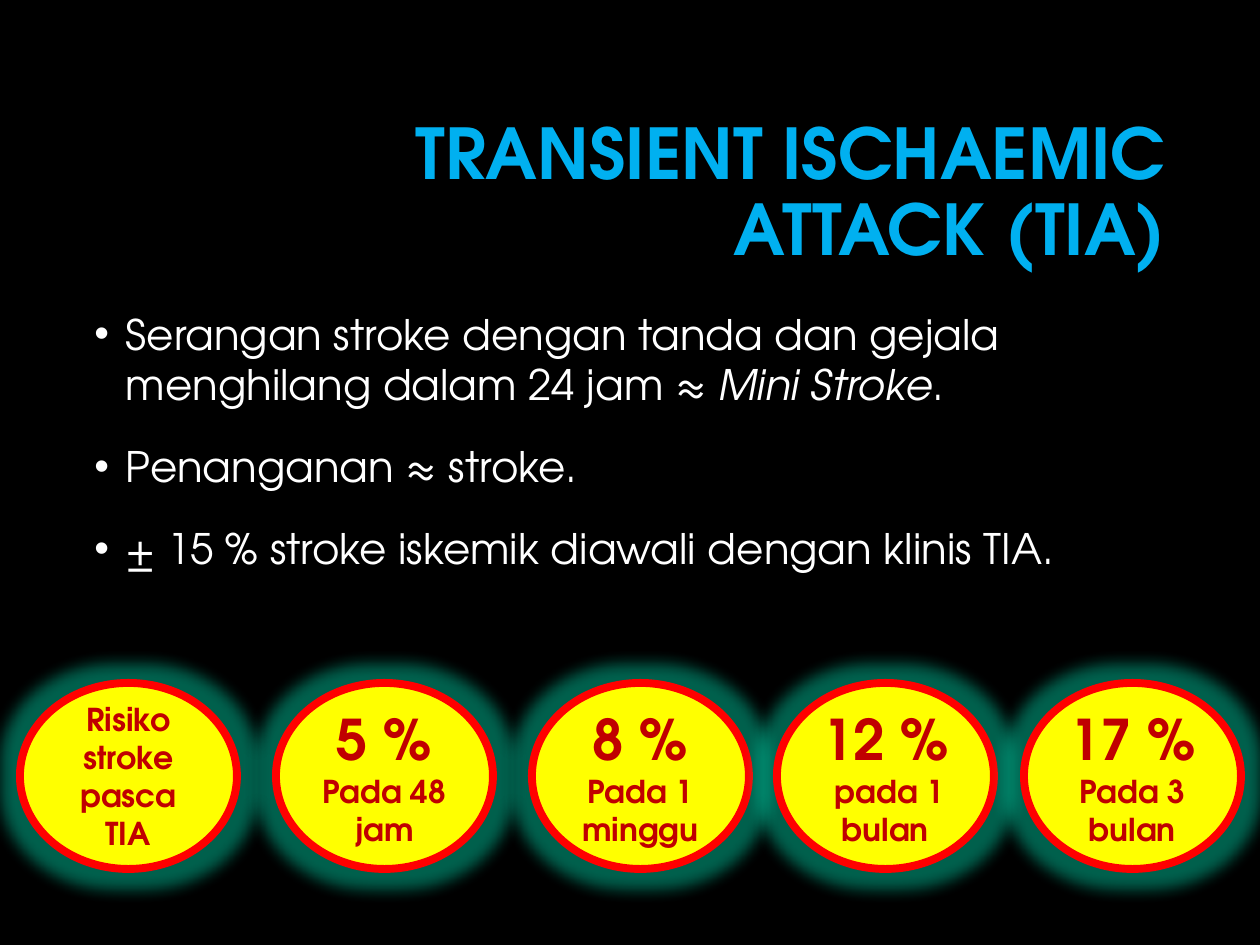
from dataclasses import dataclass

import pptx
import pptx.dml.color
import pptx.enum.shapes
import pptx.enum.text
import pptx.oxml
import pptx.oxml.ns
import pptx.util

RGB = pptx.dml.color.RGBColor
ALIGN = pptx.enum.text.PP_ALIGN
ANCHOR = pptx.enum.text.MSO_ANCHOR
BLACK = RGB(0x00, 0x00, 0x00)
WHITE = RGB(0xFF, 0xFF, 0xFF)
BLUE = RGB(0x00, 0xB0, 0xF0)
YELLOW = RGB(0xFF, 0xFF, 0x00)
RED = RGB(0xFF, 0x00, 0x00)
DARK = RGB(0xC0, 0x00, 0x00)
GLOW = RGB(0x00, 0xF0, 0xC0)

FONT = "TeX Gyre Adventor"
SCALE = 914400 / 126  # EMU in one px
TOP, WIDE, HIGH = 683, 217, 186  # all risk circles


@dataclass
class Risk:
    left: int
    rate: str
    label: str


RISKS = [
    Risk(20, "", "Risiko stroke pasca TIA"),
    Risk(276, "5 %", "Pada 48 jam"),
    Risk(532, "8 %", "Pada 1 minggu"),
    Risk(777, "12 %", " pada 1 bulan"),
    Risk(1024, "17 %", "Pada 3 bulan"),
]

# Each point is a list of (text, italic) runs
POINTS = [
    [
        ("Serangan stroke dengan tanda dan gejala menghilang dalam 24 jam ≈ ", False),
        ("Mini Stroke", True),
        (".", False),
    ],
    [("Penanganan ≈ stroke.", False)],
    [("± 15 % stroke iskemik diawali dengan klinis TIA.", False)],
]


def px(num: int) -> int:
    return pptx.util.Emu(round(num * SCALE))


def add_run(para, text: str, size: int, color: RGB, bold: bool = False,
            italic: bool = False) -> None:
    run = para.add_run()
    run.text = text
    font = run.font
    font.name, font.size = FONT, pptx.util.Pt(size)
    font.bold, font.italic = bold, italic
    font.color.rgb = color


def add_title(slide) -> None:
    title = slide.shapes.title
    title.left, title.top = px(300), px(106)
    title.width, title.height = px(878), px(178)
    frame = title.text_frame
    frame.word_wrap = True
    frame.auto_size = pptx.enum.text.MSO_AUTO_SIZE.NONE
    frame.vertical_anchor = ANCHOR.MIDDLE
    para = frame.paragraphs[0]
    para.alignment = ALIGN.RIGHT
    para.line_spacing = 0.9
    add_run(para, "TRANSIENT ISCHAEMIC ATTACK (TIA)", 40, BLUE, bold=True)


def add_points(slide) -> None:
    box = slide.shapes.add_textbox(px(82), px(302), px(1096), px(561))
    frame = box.text_frame
    frame.word_wrap = True
    for i, runs in enumerate(POINTS):
        para = frame.add_paragraph() if i else frame.paragraphs[0]
        props = para._p.get_or_add_pPr()
        props.set("marL", "228600")
        props.set("indent", "-228600")
        for tag, key, value in (("a:buFont", "typeface", "Arial"),
                                ("a:buChar", "char", "•")):
            bullet = pptx.oxml.parse_xml(
                f'<{tag} {pptx.oxml.ns.nsdecls("a")} {key}="{value}"/>')
            props.append(bullet)
        if i:
            para.space_before = pptx.util.Pt(12)
        para.space_after = pptx.util.Pt(6)
        for text, italic in runs:
            add_run(para, text, 24, WHITE, italic=italic)


def add_glow(shape) -> None:
    shape._element.spPr.append(pptx.oxml.parse_xml(
        f'<a:effectLst {pptx.oxml.ns.nsdecls("a")}><a:glow rad="228600">'
        f'<a:srgbClr val="{GLOW}"><a:alpha val="40000"/></a:srgbClr>'
        '</a:glow></a:effectLst>'))


def add_risk(slide, risk: Risk) -> None:
    kind = pptx.enum.shapes.MSO_SHAPE.FLOWCHART_CONNECTOR
    shape = slide.shapes.add_shape(kind, px(risk.left), px(TOP), px(WIDE), px(HIGH))
    shape.fill.solid()
    shape.fill.fore_color.rgb = YELLOW
    shape.line.color.rgb = RED
    shape.line.width = pptx.util.Pt(4.5)
    add_glow(shape)
    frame = shape.text_frame
    frame.word_wrap = True
    frame.vertical_anchor = ANCHOR.MIDDLE
    para = frame.paragraphs[0]
    para.alignment = ALIGN.CENTER
    if risk.rate:
        add_run(para, risk.rate, 32, DARK, bold=True)
        para = frame.add_paragraph()
        para.alignment = ALIGN.CENTER
    add_run(para, risk.label, 18, DARK, bold=True)


def main() -> None:
    deck = pptx.Presentation()
    deck.slide_width, deck.slide_height = px(1260), px(945)
    slide = deck.slides.add_slide(deck.slide_layouts[5])
    slide.background.fill.solid()
    slide.background.fill.fore_color.rgb = BLACK

    # Heading and bullet points
    add_title(slide)
    add_points(slide)

    # Row of risk circles
    for risk in RISKS:
        add_risk(slide, risk)
    deck.save("out.pptx")


if __name__ == "__main__":
    main()
